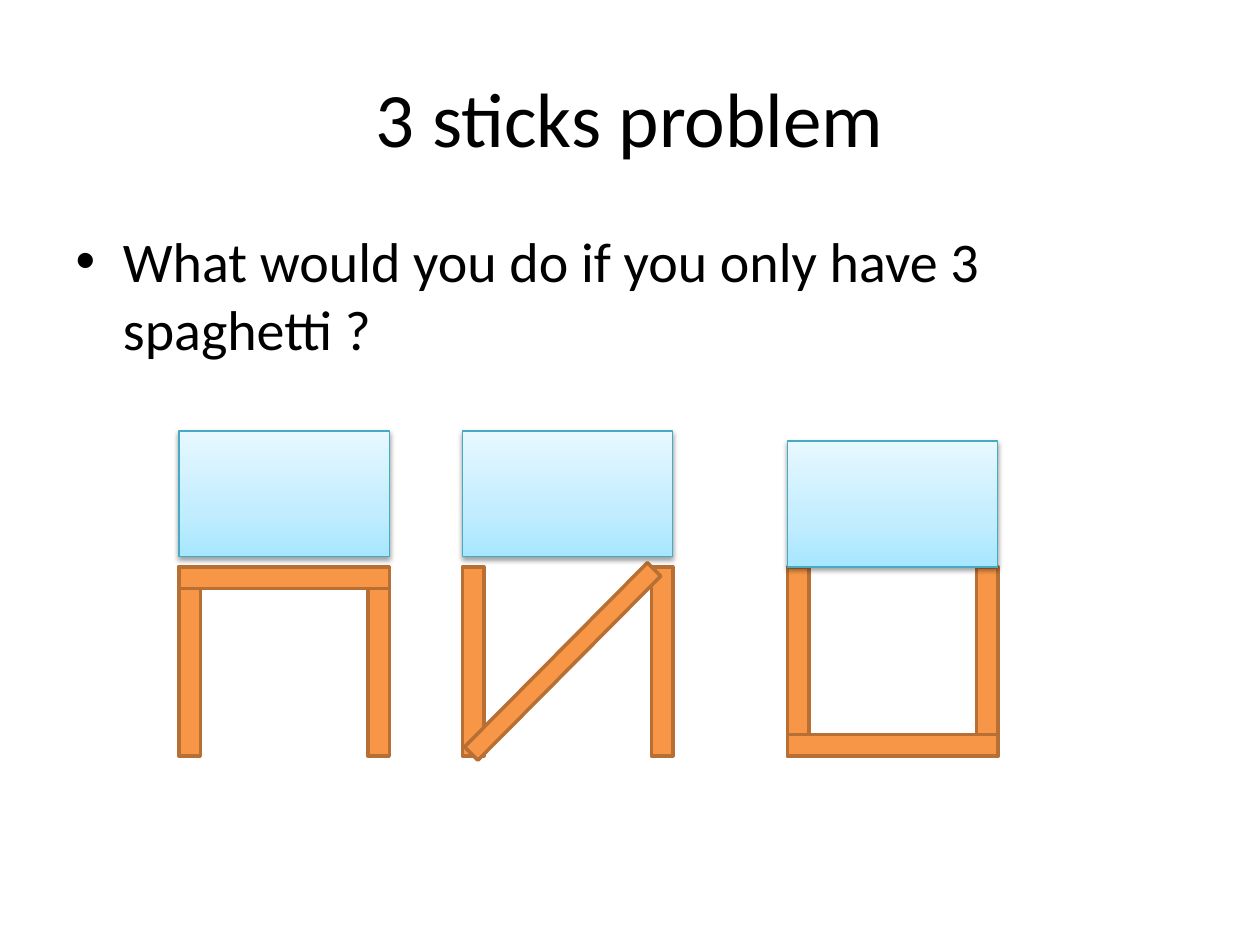
import copy

import pptx
import pptx.dml.color
import pptx.enum.shapes
import pptx.enum.text
import pptx.oxml
import pptx.oxml.ns
import pptx.util

RGBColor = pptx.dml.color.RGBColor
BLACK = RGBColor(0x00, 0x00, 0x00)
ORANGE = RGBColor(0xF7, 0x96, 0x46)
BROWN = RGBColor(0xB7, 0x6F, 0x34)
TEAL = RGBColor(0x46, 0xAA, 0xC5)
SKY_STOPS = [
    (0, RGBColor(0xA7, 0xE6, 0xFF)),
    (0.35, RGBColor(0xC1, 0xED, 0xFF)),
    (1, RGBColor(0xE7, 0xF8, 0xFF)),
]

TITLE = "3 sticks problem"
QUESTION = "What would you do if you only have 3 spaghetti ?"
FONT = "Calibri"

# Each frame: left edge, top of its load, and where the third stick goes
FRAMES = [(1.42, 3.42, "top"), (3.67, 3.42, "diagonal"), (6.25, 3.5, "bottom")]
FRAME_TOP, FRAME_WIDTH, FRAME_HEIGHT = 4.5, 1.67, 1.5
STICK = 0.17
LOAD_HEIGHT = 1
BRACE_WIDTH, BRACE_LENGTH, BRACE_ANGLE = 0.15, 2.06, 44.8

SHADOW = (
    '<a:outerShdw xmlns:a="http://schemas.openxmlformats.org/drawingml/2006/main" '
    'blurRad="40000" dist="20000" dir="5400000" rotWithShape="0">'
    '<a:srgbClr val="000000"><a:alpha val="38000"/></a:srgbClr></a:outerShdw>'
)


def fill_placeholder(box, text, top, size):
    box.left, box.top, box.width, box.height = (
        pptx.util.Inches(length) for length in (0.5, top, 9, 1.25))
    box.text_frame.text = text
    font = box.text_frame.paragraphs[0].runs[0].font
    font.name, font.size = FONT, pptx.util.Pt(size)
    font.color.rgb = BLACK


def add_rectangle(slide, left, top, width, height, line_color, line_width):
    rectangle = slide.shapes.add_shape(
        pptx.enum.shapes.MSO_SHAPE.RECTANGLE,
        *(pptx.util.Inches(length) for length in (left, top, width, height)))
    rectangle.shadow.inherit = False
    rectangle.line.color.rgb = line_color
    rectangle.line.width = pptx.util.Pt(line_width)
    return rectangle


def add_stick(slide, left, top, width, height, angle=0):
    stick = add_rectangle(slide, left, top, width, height, BROWN, 2)
    stick.fill.solid()
    stick.fill.fore_color.rgb = ORANGE
    stick.rotation = angle


def add_load(slide, left, top):
    load = add_rectangle(slide, left, top, FRAME_WIDTH, LOAD_HEIGHT, TEAL, 0.75)
    load.fill.gradient()
    load.fill.gradient_angle = 90
    properties = load._element.spPr
    stop_list = properties.find(".//" + pptx.oxml.ns.qn("a:gsLst"))
    stop_list.insert(1, copy.deepcopy(stop_list[0]))
    for stop, (position, color) in zip(load.fill.gradient_stops, SKY_STOPS):
        stop.position = position
        stop.color.rgb = color
    effects = properties.find(pptx.oxml.ns.qn("a:effectLst"))
    effects.append(pptx.oxml.parse_xml(SHADOW))


def add_frame(slide, left, third_stick):
    for leg_left in (left, left + FRAME_WIDTH - STICK):
        add_stick(slide, leg_left, FRAME_TOP, STICK, FRAME_HEIGHT)
    if third_stick == "diagonal":
        add_stick(slide, left + (FRAME_WIDTH - BRACE_WIDTH) / 2 - 0.04,
                  FRAME_TOP + (FRAME_HEIGHT - BRACE_LENGTH) / 2,
                  BRACE_WIDTH, BRACE_LENGTH, BRACE_ANGLE)
    else:
        drop = FRAME_HEIGHT - STICK if third_stick == "bottom" else 0
        add_stick(slide, left, FRAME_TOP + drop, FRAME_WIDTH, STICK)


def main():
    deck = pptx.Presentation()
    deck.slide_width, deck.slide_height = pptx.util.Inches(10), pptx.util.Inches(7.5)
    slide = deck.slides.add_slide(deck.slide_layouts[1])
    title, body = slide.placeholders
    fill_placeholder(title, TITLE, 0.3, 44)
    title.text_frame.vertical_anchor = pptx.enum.text.MSO_ANCHOR.MIDDLE
    fill_placeholder(body, QUESTION, 1.75, 32)
    for left, _, third_stick in FRAMES:
        add_frame(slide, left, third_stick)
    for left, load_top, _ in FRAMES:
        add_load(slide, left, load_top)
    deck.save("out.pptx")


if __name__ == "__main__":
    main()
